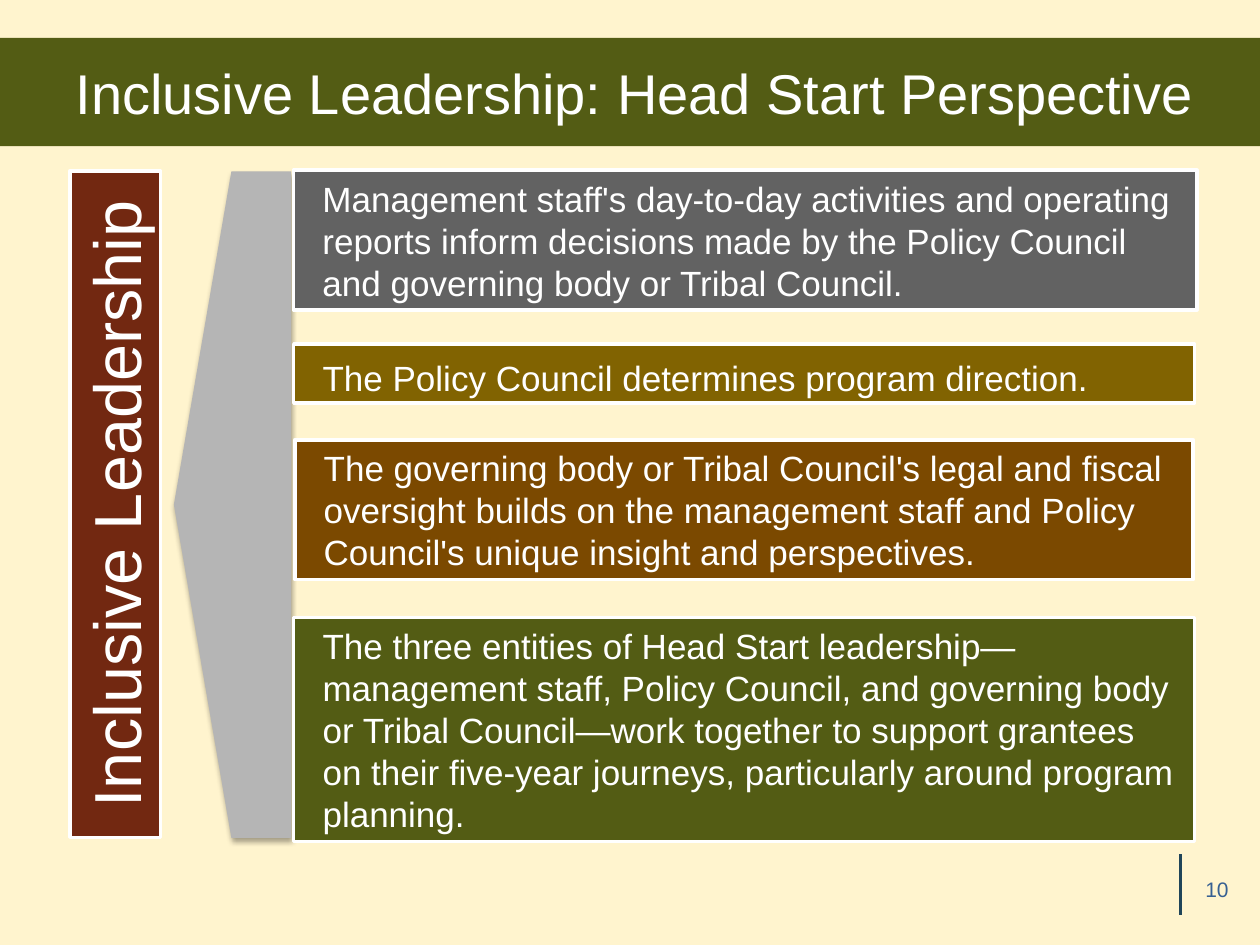
from lxml import etree
from pptx import Presentation
from pptx.dml.color import RGBColor
from pptx.enum.shapes import MSO_CONNECTOR, MSO_SHAPE
from pptx.enum.text import MSO_ANCHOR, MSO_AUTO_SIZE, PP_ALIGN
from pptx.oxml.ns import qn
from pptx.util import Pt

RECTANGLE = MSO_SHAPE.RECTANGLE
PENTAGON = MSO_SHAPE.PENTAGON
STRAIGHT = MSO_CONNECTOR.STRAIGHT
MIDDLE = MSO_ANCHOR.MIDDLE
TOP = MSO_ANCHOR.TOP
FIXED = MSO_AUTO_SIZE.NONE
GROW = MSO_AUTO_SIZE.SHAPE_TO_FIT_TEXT
LEFT = PP_ALIGN.LEFT
CENTER = PP_ALIGN.CENTER
RIGHT = PP_ALIGN.RIGHT

CREAM = RGBColor(0xFF, 0xF4, 0xCE)
WHITE = RGBColor(0xFF, 0xFF, 0xFF)
BLACK = RGBColor(0, 0, 0)
OLIVE = RGBColor(0x53, 0x5C, 0x14)
MAROON = RGBColor(0x72, 0x28, 0x11)
SILVER = RGBColor(0xB5, 0xB5, 0xB5)
GRAY = RGBColor(0x62, 0x62, 0x62)
GOLD = RGBColor(0x81, 0x63, 0x01)
BROWN = RGBColor(0x7B, 0x49, 0x00)
NAVY = RGBColor(0x20, 0x45, 0x59)
BLUE = RGBColor(0x37, 0x60, 0x92)

STATEMENTS = [
    (167.8, 97.2, 516.2, 79.9, GRAY, None, None,
     "Management staff's day-to-day activities and operating reports inform decisions "
     "made by the Policy Council and governing body or Tribal Council."),
    (167.8, 196.6, 514.8, 33.8, GOLD, 1.2, 9,
     "The Policy Council determines program direction."),
    (168.5, 251.3, 513.4, 79.9, BROWN, None, None,
     "The governing body or Tribal Council's legal and fiscal oversight builds on the "
     "management staff and Policy Council's unique insight and perspectives."),
    (167.8, 352.8, 514.8, 128.2, OLIVE, None, 9,
     "The three entities of Head Start leadership—management staff, Policy Council, and "
     "governing body or Tribal Council—work together to support grantees on their "
     "five-year journeys, particularly around program planning."),
]


class SlideBuilder:
    font = "Arial"
    border = 2

    def __init__(self, deck):
        self.page = deck.slides.add_slide(deck.slide_layouts[5])

    def background(self, color):
        fill = self.page.background.fill
        fill.solid()
        fill.fore_color.rgb = color

    def set_text(self, shape, text, size, color=WHITE, align=LEFT, anchor=MIDDLE,
                 margin=0, indent=0, line_spacing=None, space_after=None, fit=FIXED):
        frame = shape.text_frame
        frame.text = text
        frame.word_wrap = True
        frame.auto_size = fit
        frame.vertical_anchor = anchor
        frame.margin_left = frame.margin_right = Pt(7.2)
        frame.margin_top = frame.margin_bottom = Pt(3.6)
        para = frame.paragraphs[0]
        para.alignment = align
        para.line_spacing = line_spacing
        para.space_before = Pt(0)
        para.space_after = Pt(space_after or 0)
        properties = para._p.get_or_add_pPr()
        properties.set("marL", str(Pt(margin)))
        properties.set("indent", str(Pt(indent)))
        span = para.runs[0]
        span.font.name = self.font
        span.font.size = Pt(size)
        span.font.color.rgb = color

    def title(self, text, left, top, width, height, fill):
        box = self.page.shapes.title
        box.left, box.top, box.width, box.height = Pt(left), Pt(top), Pt(width), Pt(height)
        box.fill.solid()
        box.fill.fore_color.rgb = fill
        self.set_text(box, text, 32, indent=36)

    def shape(self, kind, left, top, width, height, fill):
        shape = self.page.shapes.add_shape(kind, Pt(left), Pt(top), Pt(width), Pt(height))
        shape.shadow.inherit = False
        shape.fill.solid()
        shape.fill.fore_color.rgb = fill
        shape.line.fill.background()
        return shape

    def panel(self, text, left, top, width, height, fill, size, rotation=0, **style):
        box = self.shape(RECTANGLE, left, top, width, height, fill)
        box.line.color.rgb = WHITE
        box.line.width = Pt(self.border)
        box.rotation = rotation
        self.set_text(box, text, size, **style)

    def left_arrow(self, left, top, width, height, fill, point):
        arrow = self.shape(PENTAGON, left, top, width, height, fill)
        arrow.adjustments[0] = point
        properties = arrow._element.spPr
        properties.find(qn("a:xfrm")).set("flipH", "1")
        shadow = etree.SubElement(
            properties.find(qn("a:effectLst")), qn("a:outerShdw"),
            blurRad=str(Pt(3.1)), dist=str(Pt(1.8)), dir="5400000", rotWithShape="0")
        color = etree.SubElement(shadow, qn("a:srgbClr"), val=str(BLACK))
        etree.SubElement(color, qn("a:alpha"), val="35000")

    def rule(self, x, top, bottom, color):
        line = self.page.shapes.add_connector(STRAIGHT, Pt(x), Pt(top), Pt(x), Pt(bottom))
        line.line.color.rgb = color
        line.line.width = Pt(self.border)
        etree.SubElement(line._element.spPr, qn("a:effectLst"))

    def label(self, text, left, top, width, height, size, color, align):
        box = self.page.shapes.add_textbox(Pt(left), Pt(top), Pt(width), Pt(height))
        self.set_text(box, text, size, color, align, TOP)


def main():
    deck = Presentation()
    deck.slide_width, deck.slide_height = Pt(720), Pt(540)
    builder = SlideBuilder(deck)
    builder.background(CREAM)
    builder.rule(674.6, 488.2, 522.7, NAVY)
    builder.label("10", 651.6, 497.5, 57.6, 28.8, 12, BLUE, RIGHT)
    builder.left_arrow(99.4, 97.9, 67, 380.9, SILVER, 0.49)
    builder.title("Inclusive Leadership: Head Start Perspective", 0, 21.6, 720, 61.9, OLIVE)
    builder.panel("Inclusive Leadership", -124.6, 262.1, 380.9, 51.8, MAROON, 38,
                  rotation=270, align=CENTER)
    for left, top, width, height, fill, spacing, after, text in STATEMENTS:
        builder.panel(text, left, top, width, height, fill, 20, margin=9.4,
                      line_spacing=spacing, space_after=after, fit=GROW)
    deck.save("out.pptx")


if __name__ == "__main__":
    main()
